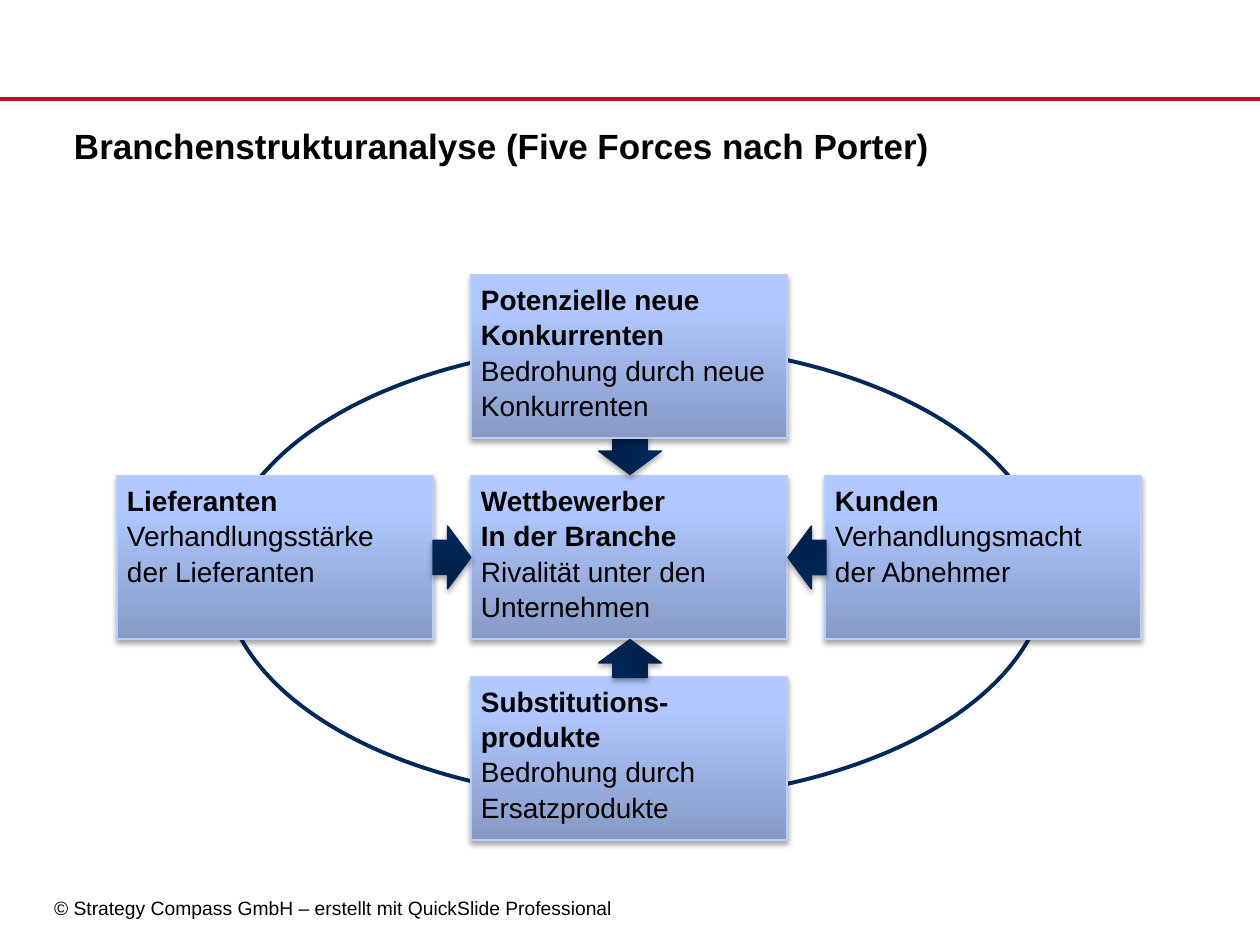
import copy
import dataclasses

import lxml.etree
import pptx
import pptx.dml.color
import pptx.enum.shapes
import pptx.enum.text
import pptx.oxml.ns
import pptx.util

RGB = pptx.dml.color.RGBColor
KIND = pptx.enum.shapes.MSO_SHAPE
WHITE = RGB(0xFF, 0xFF, 0xFF)
BLACK = RGB(0x00, 0x00, 0x00)
RED = RGB(0xC8, 0x0A, 0x1E)
NAVY = RGB(0x00, 0x28, 0x5A)
EDGE = RGB(0xB8, 0xCD, 0xFB)
DARK = RGB(0x00, 0x27, 0x58)
PALE_STOPS = [
    (0, RGB(0x87, 0x9A, 0xC6)),
    (0.8, RGB(0xB0, 0xC8, 0xFF)),
    (1, RGB(0xB2, 0xCA, 0xFF)),
]
DARK_STOPS = [
    (0, RGB(0x00, 0x1E, 0x43)),
    (0.8, RGB(0x00, 0x27, 0x57)),
    (1, DARK),
]
FONT = "Arial"
SCALE = 914400 / 126
WIDE, HIGH = 316, 163
LEFT, TOP = 117, 275
STEP_X, STEP_Y = 354, 201
ARROW_W, ARROW_H = 38, 63


@dataclasses.dataclass
class Force:
    col: int
    row: int
    heads: list[str]
    body: str


@dataclasses.dataclass
class Arrow:
    mid_x: int
    mid_y: int
    turn: int


FORCES = [
    Force(0, 1, ["Lieferanten"], "Verhandlungsstärke der Lieferanten"),
    Force(2, 1, ["Kunden"], "Verhandlungsmacht der Abnehmer"),
    Force(1, 2, ["Substitutions-", "produkte"], "Bedrohung durch Ersatzprodukte"),
    Force(1, 1, ["Wettbewerber", "In der Branche"], "Rivalität unter den Unternehmen"),
    Force(1, 0, ["Potenzielle neue", "Konkurrenten"], "Bedrohung durch neue Konkurrenten"),
]
ARROWS = [
    Arrow(630, 455, 90),
    Arrow(630, 658, 270),
    Arrow(452, 557, 0),
    Arrow(807, 557, 180),
]


def px(count: int) -> pptx.util.Emu:
    return pptx.util.Emu(round(count * SCALE))


def style(para, size: int, bold: bool) -> None:
    for run in para.runs:
        run.font.name = FONT
        run.font.size = pptx.util.Pt(size)
        run.font.bold = bold
        run.font.color.rgb = BLACK


def set_frame(frame, inset: tuple[int, int, int, int]) -> None:
    frame.word_wrap = True
    frame.vertical_anchor = pptx.enum.text.MSO_ANCHOR.TOP
    frame.margin_left, frame.margin_top, frame.margin_right, frame.margin_bottom = map(px, inset)


def add_label(slide, box: tuple[int, int, int, int], text: str, size: int,
              bold: bool, inset: tuple[int, int, int, int]) -> None:
    frame = slide.shapes.add_textbox(*map(px, box)).text_frame
    set_frame(frame, inset)
    frame.text = text
    style(frame.paragraphs[0], size, bold)


def shade(shape, stops: list, edge: RGB) -> None:
    fill = shape.fill
    fill.gradient()
    fill.gradient_angle = 90
    group = shape._element.spPr.find(".//" + pptx.oxml.ns.qn("a:gsLst"))
    group.append(copy.deepcopy(group[-1]))
    for stop, (place, color) in zip(fill.gradient_stops, stops):
        stop.position = place
        stop.color.rgb = color
    shape.line.color.rgb = edge
    shape.line.width = pptx.util.Pt(0.75)
    shape.shadow.inherit = False
    qn = pptx.oxml.ns.qn
    glow = shape._element.spPr.find(qn("a:effectLst"))
    cast = lxml.etree.SubElement(glow, qn("a:outerShdw"), blurRad="40000",
                                 dist="23000", dir="5400000", rotWithShape="0")
    tint = lxml.etree.SubElement(cast, qn("a:srgbClr"), val=str(BLACK))
    lxml.etree.SubElement(tint, qn("a:alpha"), val="35000")


def add_force(slide, force: Force) -> None:
    box = LEFT + force.col * STEP_X, TOP + force.row * STEP_Y, WIDE, HIGH
    shape = slide.shapes.add_shape(KIND.RECTANGLE, *map(px, box))
    shade(shape, PALE_STOPS, EDGE)
    frame = shape.text_frame
    set_frame(frame, (10, 6, 13, 6))
    frame.text = "\n".join([*force.heads, force.body])
    for rank, para in enumerate(frame.paragraphs):
        head = rank < len(force.heads)
        para.alignment = pptx.enum.text.PP_ALIGN.LEFT
        para.line_spacing = 1.05
        if head:
            props = para._p.get_or_add_pPr()
            props.set("marL", str(px(25)))
            props.set("indent", str(-px(25)))
        style(para, 16, head)


def add_arrow(slide, arrow: Arrow) -> None:
    box = arrow.mid_x - ARROW_W // 2, arrow.mid_y - ARROW_H // 2, ARROW_W, ARROW_H
    shape = slide.shapes.add_shape(KIND.RIGHT_ARROW, *map(px, box))
    shape.adjustments[0] = 0.545
    shape.adjustments[1] = 0.615
    shape.rotation = arrow.turn
    shade(shape, DARK_STOPS, DARK)


def add_rule(slide) -> None:
    rule = slide.shapes.add_connector(pptx.enum.shapes.MSO_CONNECTOR.STRAIGHT,
                                      0, px(99), px(1260), px(99))
    rule.line.color.rgb = RED
    rule.line.width = pptx.util.Pt(2.25)
    lxml.etree.SubElement(rule._element.spPr, pptx.oxml.ns.qn("a:effectLst"))


def add_ring(slide) -> None:
    ring = slide.shapes.add_shape(KIND.OVAL, px(223), px(344), px(824), px(456))
    ring.fill.background()
    ring.line.color.rgb = NAVY
    ring.line.width = pptx.util.Pt(2.25)
    ring.shadow.inherit = False


def main() -> None:
    deck = pptx.Presentation()
    deck.slide_width, deck.slide_height = px(1260), px(945)
    slide = deck.slides.add_slide(deck.slide_layouts[6])
    slide.background.fill.solid()
    slide.background.fill.fore_color.rgb = WHITE
    add_rule(slide)
    add_label(slide, (44, 890, 724, 20),
              "© Strategy Compass GmbH – erstellt mit QuickSlide Professional",
              11, False, (10, 6, 10, 6))
    add_label(slide, (74, 124, 1111, 79),
              "Branchenstrukturanalyse (Five Forces nach Porter)",
              20, True, (0, 0, 0, 0))
    add_ring(slide)
    for force in FORCES[:-1]:
        add_force(slide, force)
    for arrow in ARROWS:
        add_arrow(slide, arrow)
    add_force(slide, FORCES[-1])
    deck.save("out.pptx")


if __name__ == "__main__":
    main()
